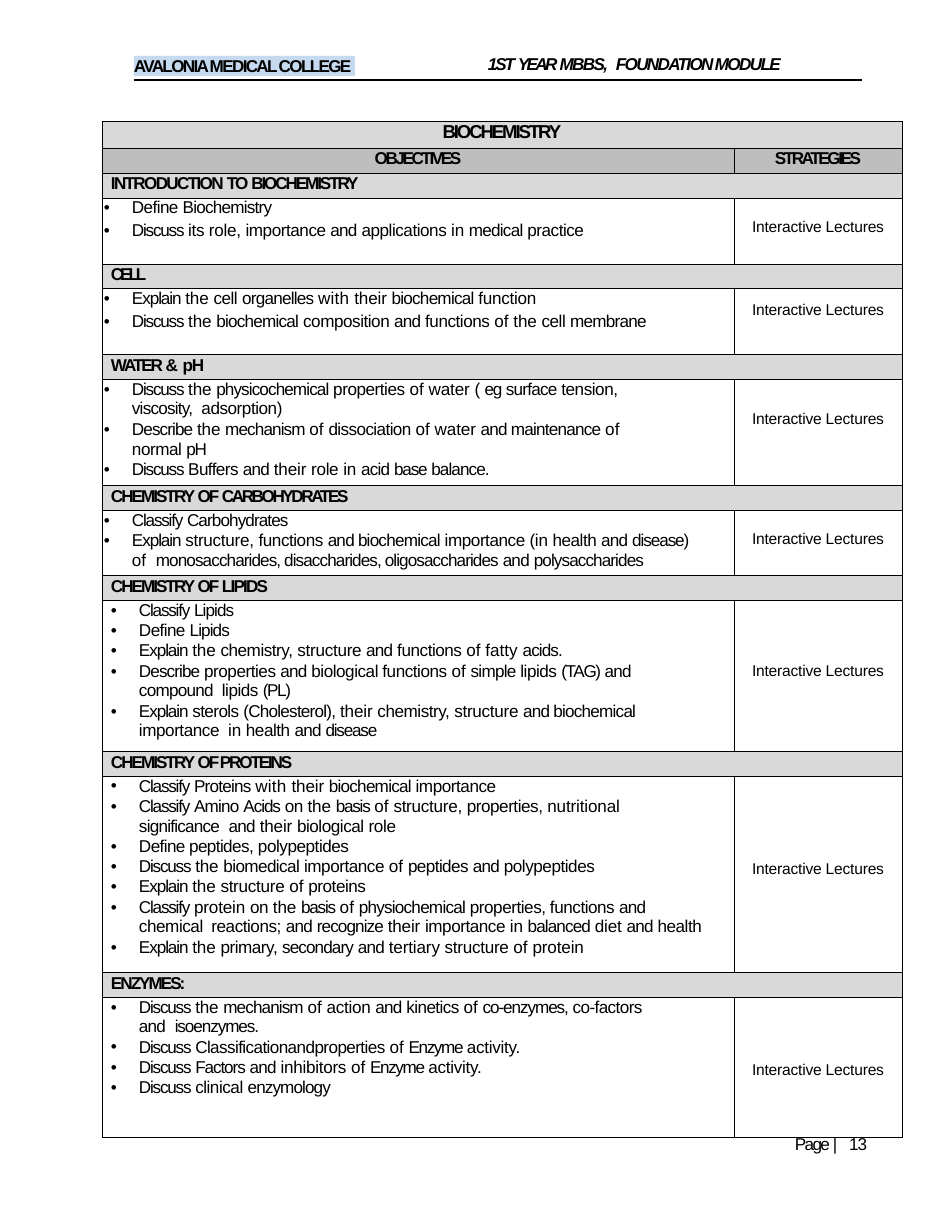
from dataclasses import dataclass
from itertools import groupby

from lxml.etree import SubElement
from pptx import Presentation
from pptx.dml.color import RGBColor
from pptx.enum.shapes import MSO_CONNECTOR as Connector, MSO_SHAPE as Shape
from pptx.enum.text import MSO_ANCHOR as Anchor, MSO_AUTO_SIZE as AutoSize, PP_ALIGN as Align
from pptx.oxml import parse_xml
from pptx.oxml.ns import nsdecls, qn
from pptx.util import Emu, Pt

BLACK = RGBColor(0x00, 0x00, 0x00)
LIGHT_GRAY = RGBColor(0xD9, 0xD9, 0xD9)
MID_GRAY = RGBColor(0xBE, 0xBE, 0xBE)
PALE_BLUE = RGBColor(0xC5, 0xD9, 0xEF)
PX_PER_INCH = 112
HANGING = 28
DEFAULT_TRACKING = -0.3
WORDS_BY_TRACKING = {
    2.2: "|",
    0.1: "with",
    0: "of fatty",
    -0.1: "the their in water tertiary nutritional protein diet Interactive Lectures",
    -0.2: "its role, role structure, structure function action activity. inhibitors (in &",
    -0.4: "Define Buffers dissociation peptides peptides, sterols kinetics co-factors "
          "Classificationandproperties biomedical",
    -0.5: "Biochemistry and medical organelles biochemical membrane surface viscosity, "
          "maintenance acid simple compound (Cholesterol), Proteins Amino significance physiochemical",
    -0.6: "Describe physicochemical mechanism balance. Carbohydrates Lipids acids. recognize "
          "monosaccharides, disaccharides, oligosaccharides polysaccharides balanced secondary "
          "enzymology 13",
    -0.7: "Explain disease) Acids co-enzymes, isoenzymes. Factors",
    -0.8: "Discuss Classify eg base disease basis pH",
    -0.9: "(TAG) (PL) Enzyme",
    -1.1: "INTRODUCTION AVALONIA MEDICAL COLLEGE MBBS, FOUNDATION MODULE Page",
    -1.2: "TO LIPIDS",
    -1.3: "CHEMISTRY ENZYMES:",
    -1.4: "BIOCHEMISTRY OF WATER PROTEINS 1ST",
    -1.6: "OBJECTIVES STRATEGIES CARBOHYDRATES",
    -1.7: "YEAR",
    -2: "CELL",
}
TRACKING = {word: value for value, words in WORDS_BY_TRACKING.items() for word in words.split()}


@dataclass
class Objective:
    text: str
    right: int = 0


@dataclass
class Section:
    heading: str
    height: int
    strategy_top: int
    objectives: list[Objective]
    left: int = 37
    gap: float = 0.8


SECTIONS = [
    Section("INTRODUCTION TO BIOCHEMISTRY", 66, 21, [
        Objective("Define Biochemistry"),
        Objective("Discuss its role, importance and applications in medical practice"),
    ], left=30, gap=2.9),
    Section("CELL", 66, 13, [
        Objective("Explain the cell organelles with their biochemical function"),
        Objective("Discuss the biochemical composition and functions of the cell membrane"),
    ], left=30, gap=2.9),
    Section("WATER & pH", 106, 31, [
        Objective("Discuss the physicochemical properties of water ( eg surface tension, "
                  "viscosity,  adsorption)", 80),
        Objective("Describe the mechanism of dissociation of water and maintenance of normal pH", 80),
        Objective("Discuss Buffers and their role in acid base balance."),
    ], left=30),
    Section("CHEMISTRY OF CARBOHYDRATES", 65, 20, [
        Objective("Classify Carbohydrates"),
        Objective("Explain structure, functions and biochemical importance (in health and disease) of  "
                  "monosaccharides, disaccharides, oligosaccharides and polysaccharides", 34),
    ], left=30),
    Section("CHEMISTRY OF LIPIDS", 151, 62, [
        Objective("Classify Lipids"),
        Objective("Define Lipids"),
        Objective("Explain the chemistry, structure and functions of fatty acids."),
        Objective("Describe properties and biological functions of simple lipids (TAG) and "
                  "compound  lipids (PL)", 80),
        Objective("Explain sterols (Cholesterol), their chemistry, structure and biochemical "
                  "importance  in health and disease", 80),
    ]),
    Section("CHEMISTRY OF PROTEINS", 196, 84, [
        Objective("Classify Proteins with their biochemical importance"),
        Objective("Classify Amino Acids on the basis of structure, properties, nutritional "
                  "significance  and their biological role", 80),
        Objective("Define peptides, polypeptides"),
        Objective("Discuss the biomedical importance of peptides and polypeptides"),
        Objective("Explain the structure of proteins"),
        Objective("Classify protein on the basis of physiochemical properties, functions and chemical  "
                  "reactions; and recognize their importance in balanced diet and health", 25),
        Objective("Explain the primary, secondary and tertiary structure of protein"),
    ]),
    Section("ENZYMES:", 140, 64, [
        Objective("Discuss the mechanism of action and kinetics of co-enzymes, co-factors and  "
                  "isoenzymes.", 75),
        Objective("Discuss Classificationandproperties of Enzyme activity."),
        Objective("Discuss Factors and inhibitors of Enzyme activity."),
        Objective("Discuss clinical enzymology"),
    ]),
]


def px(length: int) -> Emu:
    return Emu(round(length * 914400 / PX_PER_INCH))


def place(left: int, top: int, width: int, height: int) -> tuple:
    return px(left), px(top), px(width), px(height)


def write(para, text: str, size: float = 11, bold: bool = False, italic: bool = False,
          align=Align.LEFT, line=None) -> None:
    para.alignment = align
    para.line_spacing = line
    words = text.split(" ")
    spans = [list(group) for _, group in
             groupby(words, key=lambda word: TRACKING.get(word, DEFAULT_TRACKING))]
    for index, group in enumerate(spans):
        span = para.add_run()
        span.text = " ".join(group) + (" " if index < len(spans) - 1 else "")
        span.font.name, span.font.size = "Arial", Pt(size)
        span.font.bold, span.font.italic = bold, italic
        span.font.color.rgb = BLACK
        tracking = TRACKING.get(group[0], DEFAULT_TRACKING)
        span.font._element.set("spc", str(round(tracking * 100)))


def indent(para, left: int, first: int = 0, right: int = 0) -> None:
    properties = para._p.get_or_add_pPr()
    for name, length in (("marL", left), ("marR", right), ("indent", first)):
        properties.set(name, str(px(length)))


def add_bullet(para) -> None:
    properties = para._p.get_or_add_pPr()
    SubElement(properties, qn("a:buFont")).set("typeface", "Arial")
    SubElement(properties, qn("a:buChar")).set("char", "•")
    para._p.get_or_add_endParaRPr().set("sz", "1100")


def clear_margins(frame) -> None:
    frame.margin_left = frame.margin_right = frame.margin_top = frame.margin_bottom = 0


def prepare_frame(box):
    frame = box.text_frame
    clear_margins(frame)
    frame.word_wrap = True
    frame.auto_size = AutoSize.NONE
    frame.vertical_anchor = Anchor.TOP
    return frame.paragraphs[0]


def format_cell(cell, color=None) -> None:
    clear_margins(cell)
    properties = cell._tc.get_or_add_tcPr()
    for index, side in enumerate(("lnL", "lnR", "lnT", "lnB")):
        properties.insert(index, parse_xml(
            f'<a:{side} {nsdecls("a")} w="{Pt(0.5)}"><a:solidFill><a:srgbClr val="{BLACK}"/>'
            f'</a:solidFill></a:{side}>'))
    if color is None:
        cell.fill.background()
    else:
        cell.fill.solid()
        cell.fill.fore_color.rgb = color


def draw_section(table, row: int, section: Section) -> None:
    heading, objectives, strategy = table.cell(row, 0), table.cell(row + 1, 0), table.cell(row + 1, 1)
    heading.merge(table.cell(row, 1))
    para = heading.text_frame.paragraphs[0]
    write(para, section.heading, bold=True, line=Pt(12.9))
    indent(para, 9)
    frame = objectives.text_frame
    for index, objective in enumerate(section.objectives):
        para = frame.add_paragraph() if index else frame.paragraphs[0]
        write(para, objective.text, line=1.02 if objective.right else None)
        para.space_before = Pt(section.gap if index else 0.2)
        indent(para, section.left, -HANGING, objective.right)
        add_bullet(para)
    write(strategy.text_frame.paragraphs[0], "Interactive Lectures", size=10, align=Align.CENTER)
    strategy.margin_top = px(section.strategy_top)


def draw_table(page) -> None:
    heights = [27, 25] + [height for section in SECTIONS for height in (25, section.height)]
    table = page.shapes.add_table(len(heights), 2, *place(102, 121, 800, sum(heights))).table
    table.first_row = table.horz_banding = False
    for column, width in zip(table.columns, (632, 168)):
        column.width = px(width)
    for index, (row, height) in enumerate(zip(table.rows, heights)):
        row.height = px(height)
        color = MID_GRAY if index == 1 else None if index % 2 else LIGHT_GRAY
        for cell in row.cells:
            format_cell(cell, color)
    table.cell(0, 0).merge(table.cell(0, 1))
    write(table.cell(0, 0).text_frame.paragraphs[0], "BIOCHEMISTRY", 12, True,
          align=Align.CENTER, line=Pt(14.1))
    for column, label in enumerate(("OBJECTIVES", "STRATEGIES")):
        write(table.cell(1, column).text_frame.paragraphs[0], label, bold=True,
              align=Align.CENTER, line=Pt(12.9))
    for index, section in enumerate(SECTIONS):
        draw_section(table, 2 + 2 * index, section)


def main() -> None:
    deck = Presentation()
    deck.slide_width, deck.slide_height = px(952), px(1232)
    page = deck.slides.add_slide(deck.slide_layouts[5])
    title = page.shapes.title
    title.left, title.top, title.width, title.height = place(488, 53, 379, 22)
    write(prepare_frame(title), "1ST YEAR MBBS,  FOUNDATION MODULE", bold=True, italic=True)
    rule = page.shapes.add_connector(Connector.STRAIGHT, *place(134, 80, 862, 80))
    rule.line.color.rgb, rule.line.width = BLACK, Pt(0.75)
    SubElement(rule._element.spPr, qn("a:effectLst"))
    college = page.shapes.add_shape(Shape.RECTANGLE, *place(134, 56, 221, 20))
    college.shadow.inherit = False
    college.fill.solid()
    college.fill.fore_color.rgb = PALE_BLUE
    college.line.fill.background()
    write(prepare_frame(college), "AVALONIA MEDICAL COLLEGE", bold=True, line=Pt(12.9))
    draw_table(page)
    number = page.shapes.add_textbox(*place(795, 1136, 90, 20))
    write(prepare_frame(number), "Page | 13", line=Pt(11.5))
    deck.save("out.pptx")


if __name__ == "__main__":
    main()
